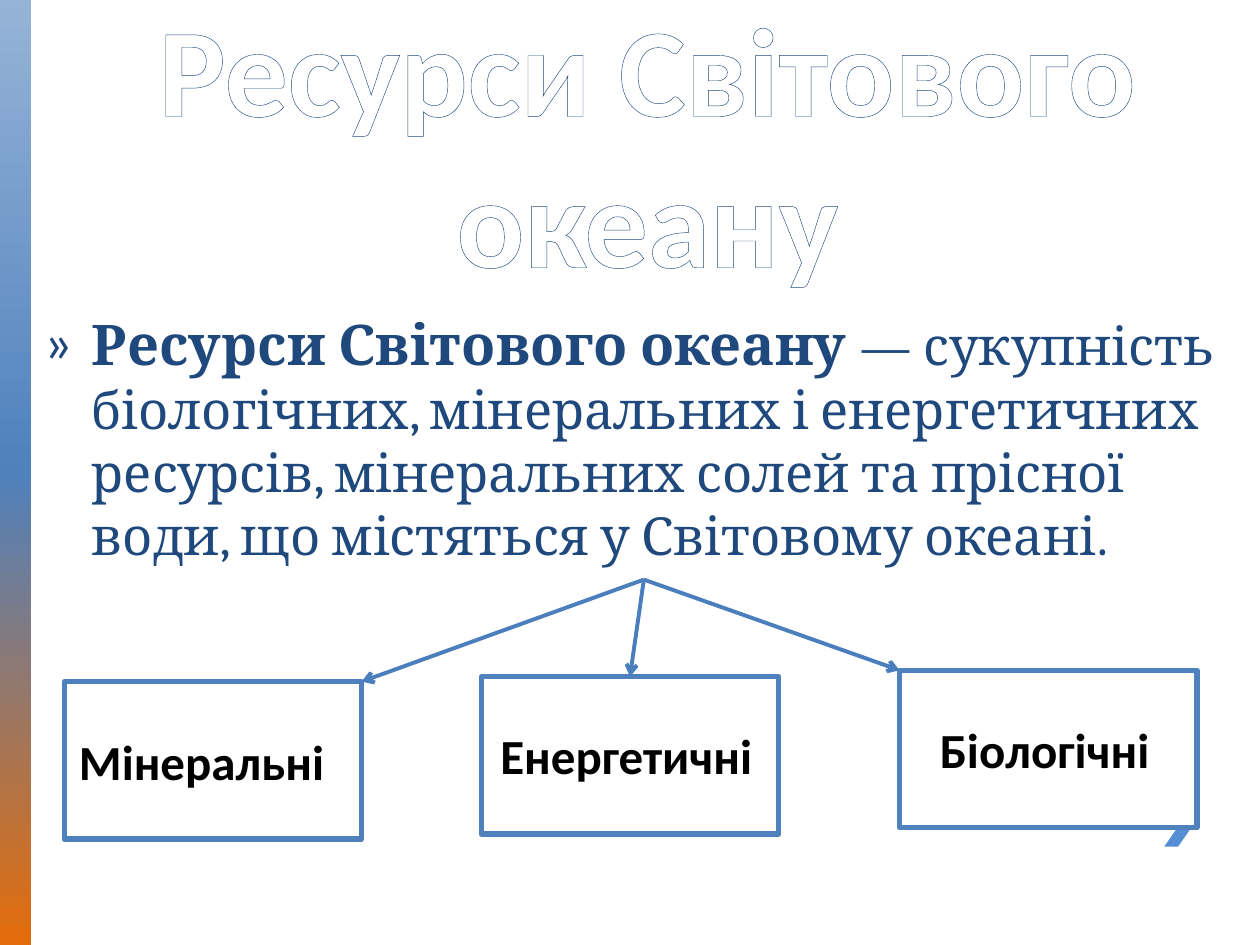
"""Build a slide on the resources of the World Ocean and their three kinds."""
from copy import deepcopy
from dataclasses import dataclass

from lxml import etree
from pptx import Presentation
from pptx.dml.color import RGBColor
from pptx.enum.shapes import MSO_CONNECTOR, MSO_SHAPE
from pptx.enum.text import MSO_ANCHOR, MSO_AUTO_SIZE, PP_ALIGN
from pptx.oxml.ns import qn
from pptx.util import Inches, Pt

RECT = MSO_SHAPE.RECTANGLE
STRAIGHT = MSO_CONNECTOR.STRAIGHT
CENTER = PP_ALIGN.CENTER
MIDDLE = MSO_ANCHOR.MIDDLE
NO_FIT = MSO_AUTO_SIZE.NONE


@dataclass(frozen=True)
class Theme:
    sans: str = "Calibri"
    serif: str = "Cambria"
    navy: str = "1F497D"
    blue: str = "4F81BD"
    arrow: str = "4B7EBC"
    chevron: str = "558ED5"
    white: str = "FFFFFF"
    black: str = "000000"
    bar: tuple = ((0, "95B3D7"), (0.5, "4F81BD"), (1, "E46C0A"))
    title: int = 72
    term: int = 32
    body: int = 30
    box: int = 28


def rgb(value):
    return RGBColor.from_string(value)


def style(r, font, size, color, bold):
    r.font.name = font
    r.font.size = Pt(size)
    r.font.color.rgb = rgb(color)
    r.font.bold = bold


theme = Theme()
prs = Presentation()
prs.slide_width, prs.slide_height = Inches(10), Inches(7.5)
s = prs.slides.add_slide(prs.slide_layouts[5])

bar = s.shapes.add_shape(RECT, 0, 0, Inches(0.25), prs.slide_height)
bar.shadow.inherit = False
bar.line.fill.background()
bar.fill.gradient()
bar.fill.gradient_angle = 270
stops = bar.fill.gradient_stops
last = bar._element.spPr.find(".//" + qn("a:gsLst"))[-1]
last.addnext(deepcopy(last))
for stop, (position, color) in zip(bar.fill.gradient_stops, theme.bar):
    stop.position = position
    stop.color.rgb = rgb(color)

points = [(9.35, 6.25), (9.24, 6.25), (9.4, 6.49), (9.24, 6.72), (9.35, 6.72), (9.51, 6.49)]
corners = [(Inches(x), Inches(y)) for x, y in points]
builder = s.shapes.build_freeform(*corners[0])
builder.add_line_segments(corners[1:], close=True)
chevron = builder.convert_to_shape()
chevron.shadow.inherit = False
chevron.fill.solid()
chevron.fill.fore_color.rgb = rgb(theme.chevron)
chevron.line.fill.background()

title = s.shapes.title
title.left, title.top = Inches(0.28), Inches(-0.03)
title.width, title.height = Inches(9.72), Inches(2.31)
tf = title.text_frame
tf.text = "Ресурси Світового океану"
tf.auto_size = NO_FIT
tf.vertical_anchor = MIDDLE
p = tf.paragraphs[0]
p.alignment = CENTER
r = p.runs[0]
style(r, theme.sans, theme.title, theme.white, True)
outline = etree.Element(qn("a:ln"), w=str(Pt(1)))
fill = etree.SubElement(outline, qn("a:solidFill"))
etree.SubElement(fill, qn("a:srgbClr"), val=theme.navy)
r.font._element.insert(0, outline)

body = s.shapes.add_textbox(Inches(0.25), Inches(2.41), Inches(9.72), Inches(2.19))
tf = body.text_frame
tf.word_wrap = True
p = tf.paragraphs[0]
p.space_before = Pt(6)
term, definition = p.add_run(), p.add_run()
term.text = "Ресурси Світового океану "
definition.text = (
    "— сукупність біологічних, мінеральних і енергетичних ресурсів, "
    "мінеральних солей та прісної води, що містяться у Світовому океані."
)
style(term, theme.serif, theme.term, theme.navy, True)
style(definition, theme.serif, theme.body, theme.navy, False)
pPr = p._p.get_or_add_pPr()
pPr.set("marL", str(Inches(0.38)))
pPr.set("indent", str(Inches(-0.38)))
etree.SubElement(pPr, qn("a:buFont"), typeface=theme.sans)
etree.SubElement(pPr, qn("a:buChar"), char="»")

kinds = [
    ("Енергетичні", 3.82, 5.37, 0.11),
    ("Мінеральні", 0.51, 5.41, 0.23),
    ("Біологічні", 7.14, 5.32, 0.11),
]
for name, left, top, right_margin in kinds:
    sp = s.shapes.add_shape(RECT, Inches(left), Inches(top), Inches(2.36), Inches(1.25))
    sp.shadow.inherit = False
    sp.fill.solid()
    sp.fill.fore_color.rgb = rgb(theme.white)
    sp.line.color.rgb = rgb(theme.blue)
    sp.line.width = Pt(3)
    tf = sp.text_frame
    tf.text = name
    tf.word_wrap = True
    tf.vertical_anchor = MIDDLE
    tf.margin_left, tf.margin_right = Inches(0.05), Inches(right_margin)
    p = tf.paragraphs[0]
    p.alignment = CENTER
    style(p.runs[0], theme.sans, theme.box, theme.black, True)

for x, y in [(2.87, 5.41), (5, 5.37), (7.14, 5.32)]:
    arrow = s.shapes.add_connector(STRAIGHT, Inches(5.11), Inches(4.6), Inches(x), Inches(y))
    arrow.line.color.rgb = rgb(theme.arrow)
    arrow.line.width = Pt(2.25)
    etree.SubElement(arrow.line._get_or_add_ln(), qn("a:tailEnd"), type="arrow")
    etree.SubElement(arrow._element.spPr, qn("a:effectLst"))

prs.save("out.pptx")
